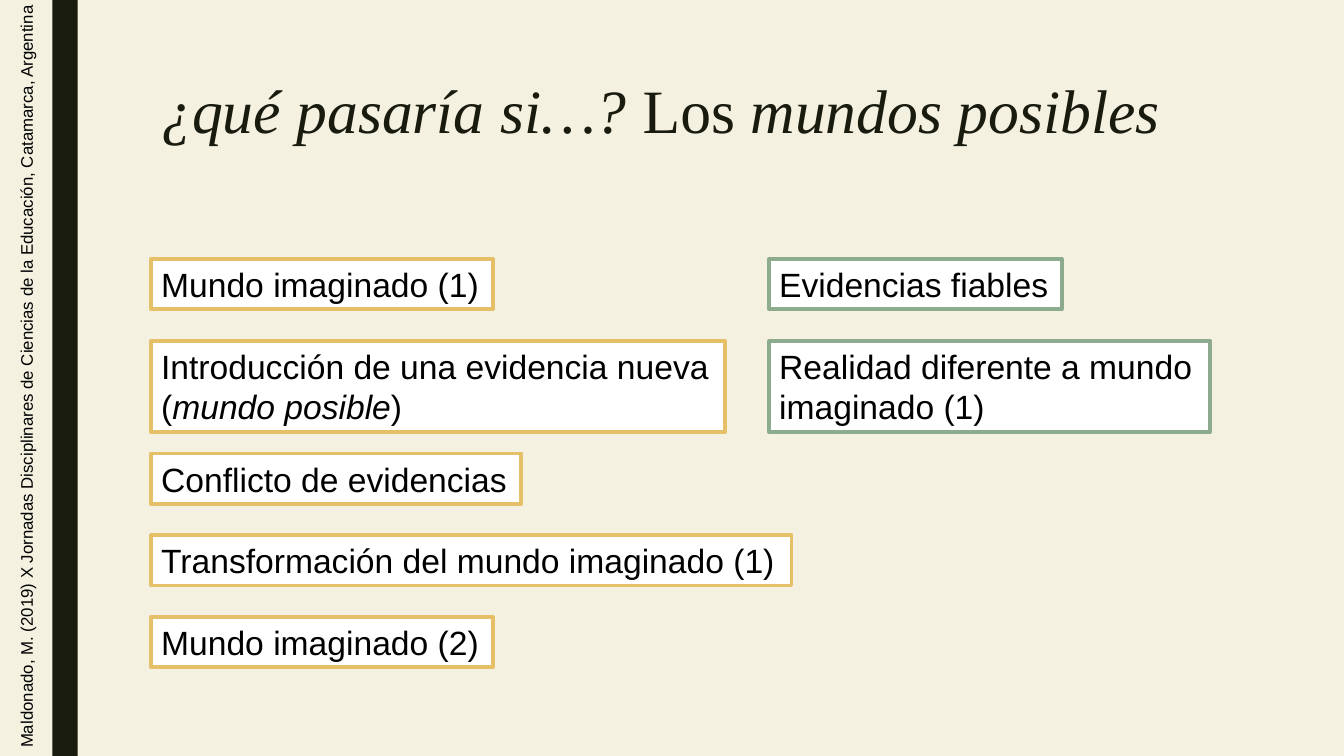
from pptx import Presentation
from pptx.dml.color import RGBColor
from pptx.enum.shapes import MSO_SHAPE as Preset
from pptx.enum.text import MSO_ANCHOR as Anchor, MSO_AUTO_SIZE as AutoSize, PP_ALIGN as Align
from pptx.util import Inches, Pt

# Colours
CREAM = RGBColor(0xF4, 0xF1, 0xE1)
DARK = RGBColor(0x19, 0x1B, 0x0E)
GOLD = RGBColor(0xE6, 0xC0, 0x69)
GREEN = RGBColor(0x8D, 0xAB, 0x8E)
WHITE = RGBColor(0xFF, 0xFF, 0xFF)
BLACK = RGBColor(0, 0, 0)

# Grid in inches: two columns, and rows at one pitch in an upper and a lower group
WIDTH, HEIGHT = 13.33, 7.5
LEFT_COLUMN, RIGHT_COLUMN = 1.5, 7.63
PITCH = 0.81
UPPER_ROWS = [2.57 + PITCH * row for row in range(2)]
LOWER_ROWS = [4.5 + PITCH * row for row in range(3)]
ONE_LINE, TWO_LINES = 0.5, 0.91

# Text formats
TITLE_FONT = {"name": "Times New Roman", "size": Pt(44)}
BOX_FONT = {"name": "Arial", "size": Pt(24)}
CREDIT_FONT = {"name": "Arial", "size": Pt(12)}


def set_values(target, values):
    for name, value in values.items():
        setattr(target, name, value)


def write(frame, paragraphs, font, color, **layout):
    """Each paragraph is a list of (text, italic) runs."""
    for index, runs in enumerate(paragraphs):
        paragraph = frame.paragraphs[0] if index == 0 else frame.add_paragraph()
        set_values(paragraph, {"alignment": Align.LEFT, **layout})
        for text, italic in runs:
            run = paragraph.add_run()
            run.text = text
            set_values(run.font, {**font, "italic": italic, "bold": False})
            run.font.color.rgb = color


def add_bar(slide):
    bar = slide.shapes.add_shape(Preset.RECTANGLE, Inches(0.52), 0, Inches(0.25), Inches(HEIGHT))
    bar.shadow.inherit = False
    bar.fill.solid()
    bar.fill.fore_color.rgb = DARK
    bar.line.fill.background()


def add_title(slide, runs):
    title = slide.shapes.title
    set_values(title, {"left": Inches(LEFT_COLUMN), "top": Inches(0.75),
                       "width": Inches(10.5), "height": Inches(1.62)})
    set_values(title.text_frame, {"vertical_anchor": Anchor.TOP, "word_wrap": True,
                                  "auto_size": AutoSize.NONE})
    write(title.text_frame, [runs], TITLE_FONT, DARK, line_spacing=0.89)


def add_box(slide, column, row, width, height, color, paragraphs, wrap=False):
    box = slide.shapes.add_shape(Preset.RECTANGLE, *map(Inches, (column, row, width, height)))
    box.shadow.inherit = False
    box.fill.solid()
    box.fill.fore_color.rgb = WHITE
    box.line.color.rgb = color
    box.line.width = Pt(2.75)
    set_values(box.text_frame, {"word_wrap": wrap, "vertical_anchor": Anchor.TOP,
                                "auto_size": AutoSize.SHAPE_TO_FIT_TEXT})
    write(box.text_frame, paragraphs, BOX_FONT, BLACK)


def add_credit(slide, text):
    # Turned about its centre, the box runs up the whole left edge
    center, thickness = 0.26, 0.3
    box = slide.shapes.add_textbox(Inches(center - HEIGHT / 2), Inches((HEIGHT - thickness) / 2),
                                   Inches(HEIGHT), Inches(thickness))
    box.rotation = 270
    set_values(box.text_frame, {"word_wrap": True, "margin_left": Inches(0.08), "margin_right": 0})
    write(box.text_frame, [[(text, False)]], CREDIT_FONT, BLACK)


def main():
    presentation = Presentation()
    set_values(presentation, {"slide_width": Inches(WIDTH), "slide_height": Inches(HEIGHT)})
    slide = presentation.slides.add_slide(presentation.slide_layouts[5])
    slide.background.fill.solid()
    slide.background.fill.fore_color.rgb = CREAM

    add_bar(slide)
    add_title(slide, [("¿qué pasaría si…? ", True), ("Los ", False), ("mundos posibles", True)])

    # Left column: the imagined world and its change
    new_evidence = [[("Introducción de una evidencia nueva", False)],
                    [("(", False), ("mundo posible", True), (")", False)]]
    steps = [
        (UPPER_ROWS[0], 3.39, ONE_LINE, [[("Mundo imaginado (1)", False)]]),
        (UPPER_ROWS[1], 5.69, TWO_LINES, new_evidence),
        (LOWER_ROWS[0], 3.67, ONE_LINE, [[("Conflicto de evidencias", False)]]),
        (LOWER_ROWS[1], 6.35, ONE_LINE, [[("Transformación del mundo imaginado (1)", False)]]),
        (LOWER_ROWS[2], 3.39, ONE_LINE, [[("Mundo imaginado (2)", False)]]),
    ]
    for row, width, height, paragraphs in steps:
        add_box(slide, LEFT_COLUMN, row, width, height, GOLD, paragraphs)

    # Right column: the evidence
    add_box(slide, RIGHT_COLUMN, UPPER_ROWS[0], 2.9, ONE_LINE, GREEN,
            [[("Evidencias fiables", False)]])
    add_box(slide, RIGHT_COLUMN, UPPER_ROWS[1], 4.37, TWO_LINES, GREEN,
            [[("Realidad diferente a mundo imaginado (1)", False)]], wrap=True)

    add_credit(slide, "Maldonado, M. (2019) X Jornadas Disciplinares de Ciencias de la Educación, "
                      "Catamarca, Argentina")
    presentation.save("out.pptx")


if __name__ == "__main__":
    main()
